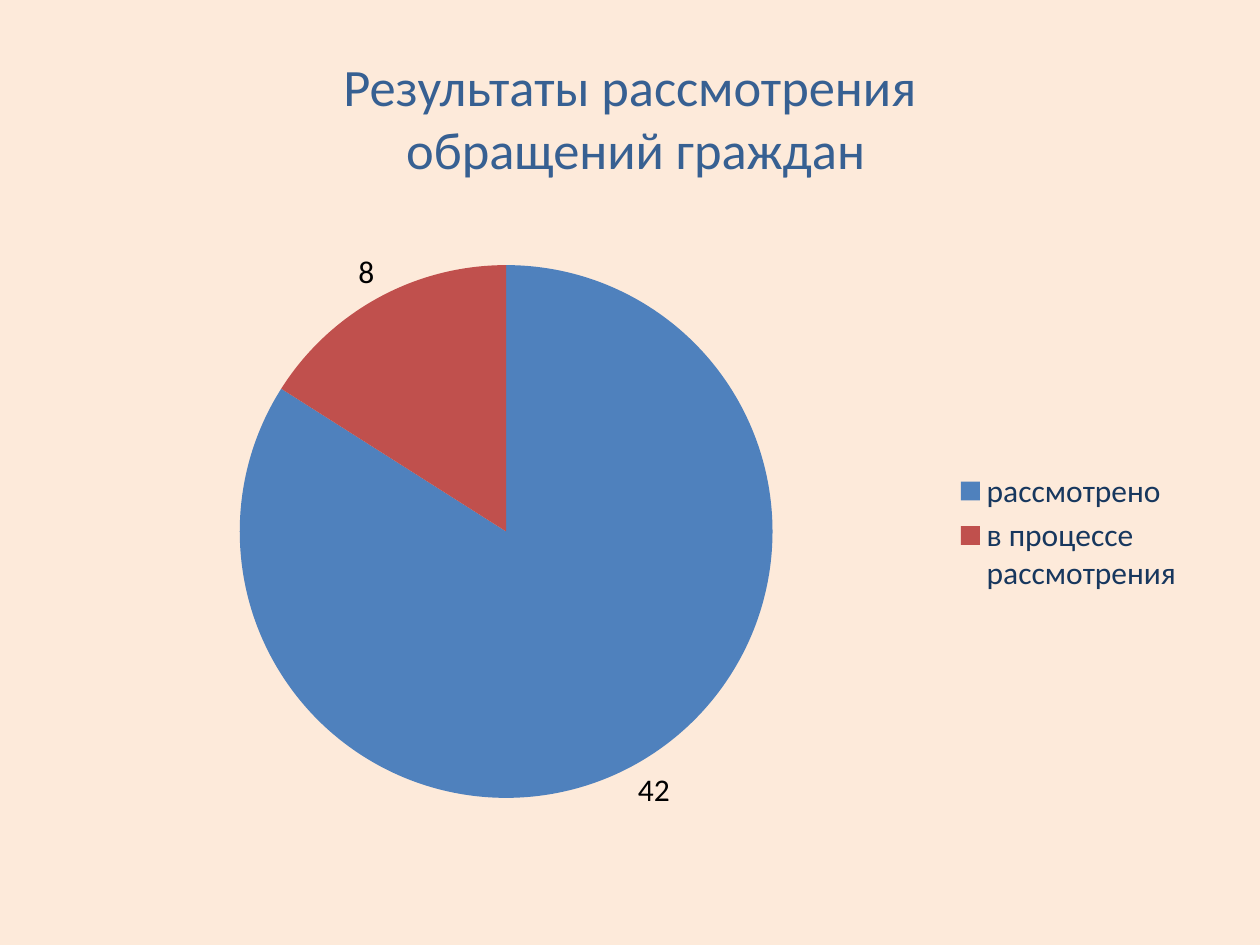
from dataclasses import dataclass

from lxml.etree import SubElement
from pptx import Presentation
from pptx.chart.data import CategoryChartData
from pptx.dml.color import RGBColor
from pptx.enum.chart import XL_CHART_TYPE as ChartType
from pptx.enum.chart import XL_LABEL_POSITION as LabelPosition
from pptx.enum.chart import XL_LEGEND_POSITION as LegendPosition
from pptx.enum.text import MSO_ANCHOR as Anchor
from pptx.enum.text import PP_ALIGN as Align
from pptx.oxml.ns import qn
from pptx.util import Pt


@dataclass(frozen=True)
class Theme:
    font: str = "Calibri"
    background: str = "FDEADA"
    heading: str = "376092"
    labels: str = "000000"
    legend: str = "17375E"
    slices: tuple = ("4F81BD", "C0504D")
    heading_size: int = 30
    chart_size: int = 18


THEME = Theme()
HEADING = ("Результаты рассмотрения", " обращений граждан")
RESULTS = {"рассмотрено": 42, "в процессе рассмотрения": 8}


def style_font(font, size, color):
    font.name = THEME.font
    font.size = Pt(size)
    font.color.rgb = RGBColor.from_string(color)


def add_heading(slide, box, lines):
    frame = slide.shapes.add_textbox(*map(Pt, box)).text_frame
    frame.word_wrap = True
    frame.vertical_anchor = Anchor.MIDDLE
    paragraph = frame.paragraphs[0]
    paragraph.alignment = Align.CENTER
    for index, line in enumerate(lines):
        if index:
            paragraph.add_line_break()
        run = paragraph.add_run()
        run.text = line
        style_font(run.font, THEME.heading_size, THEME.heading)


def place_plot(chart, box, diameter, left, top):
    plot_area = chart._chartSpace.chart.plotArea
    for old_layout in plot_area.findall(qn("c:layout")):
        plot_area.remove(old_layout)
    layout = SubElement(plot_area, qn("c:layout"))
    plot_area.insert(0, layout)
    manual = SubElement(layout, qn("c:manualLayout"))
    width, height = box[2:]
    settings = {
        "layoutTarget": "inner",
        "xMode": "edge",
        "yMode": "edge",
        "x": left / width,
        "y": top / height,
        "w": diameter / width,
        "h": diameter / height,
    }
    for tag, value in settings.items():
        SubElement(manual, qn(f"c:{tag}")).set("val", str(value))


def add_results_pie(slide, box, results):
    data = CategoryChartData()
    data.categories = list(results)
    data.add_series("Series 1", list(results.values()))
    chart = slide.shapes.add_chart(ChartType.PIE, *map(Pt, box), data).chart
    chart.has_title = False
    style_font(chart.font, THEME.chart_size, THEME.labels)

    chart.has_legend = True
    chart.legend.position = LegendPosition.RIGHT
    chart.legend.include_in_layout = False
    style_font(chart.legend.font, THEME.chart_size, THEME.legend)

    pie = chart.plots[0]
    pie.vary_by_categories = True
    series = pie.series[0]
    for index, color in enumerate(THEME.slices):
        fill = series.points[index].format.fill
        fill.solid()
        fill.fore_color.rgb = RGBColor.from_string(color)
    labels = series.data_labels
    labels.show_value = True
    labels.position = LabelPosition.OUTSIDE_END
    style_font(labels.font, THEME.chart_size, THEME.labels)
    place_plot(chart, box, diameter=304.5, left=101, top=25.5)


def build_results_slide(deck):
    slide = deck.slides.add_slide(deck.slide_layouts[6])
    fill = slide.background.fill
    fill.solid()
    fill.fore_color.rgb = RGBColor.from_string(THEME.background)
    add_heading(slide, (36, 21.6, 648, 90), HEADING)
    add_results_pie(slide, (36, 126, 648, 356.4), RESULTS)


def main():
    deck = Presentation()
    deck.slide_width, deck.slide_height = Pt(720), Pt(540)
    build_results_slide(deck)
    deck.save("out.pptx")


if __name__ == "__main__":
    main()
